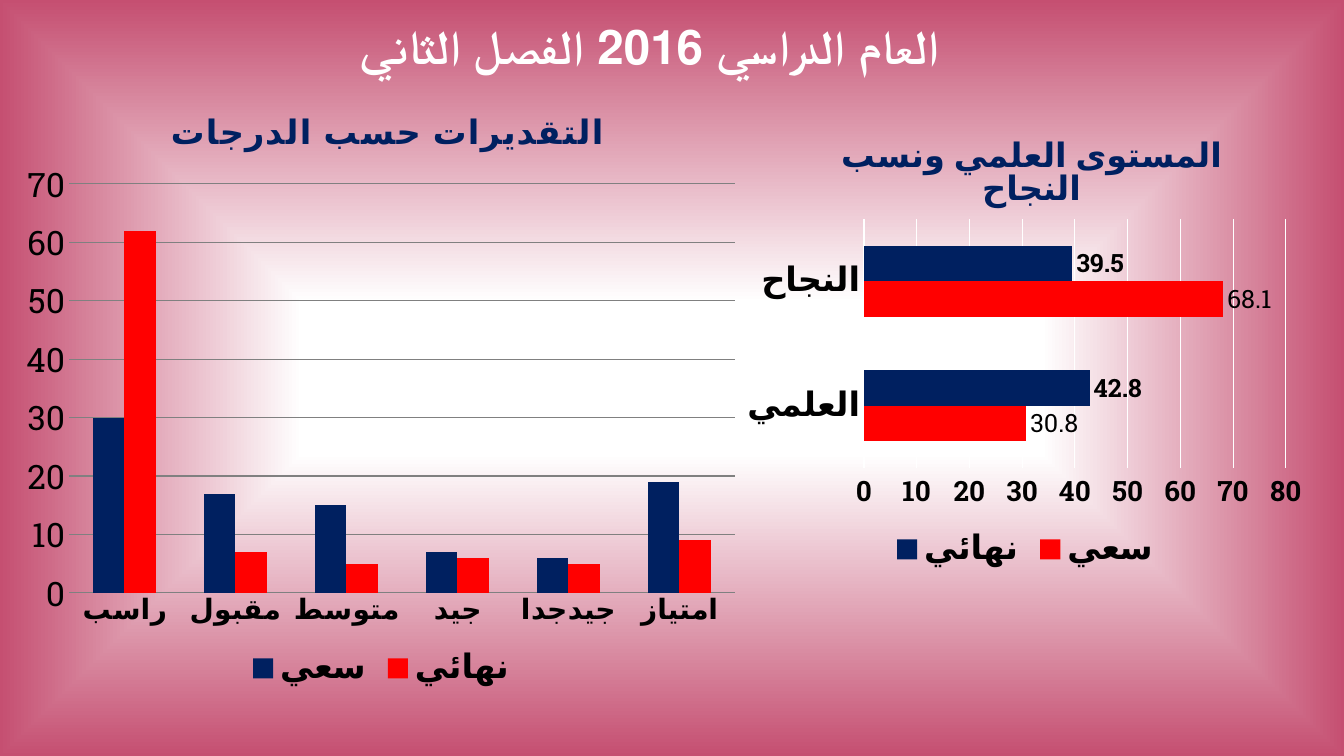
import pptx
import pptx.chart.data
import pptx.dml.color
import pptx.enum.chart
import pptx.enum.text
import pptx.oxml
import pptx.oxml.ns
import pptx.util

PX = 9071  # EMU per pixel at 100.8 pixels to the inch
FONT = "Roboto Slab"
NAVY, RED, BLACK, WHITE, GRAY, ROSE = "002060", "FF0000", "000000", "FFFFFF", "808080", "C54F71"
COURSEWORK, FINAL = "سعي", "نهائي"


def px(length):
    return pptx.util.Emu(length * PX)


def color(hex_string):
    return pptx.dml.color.RGBColor.from_string(hex_string)


def style_font(font, size, hex_string, bold=False):
    font.name = FONT
    font.size = pptx.util.Pt(size)
    font.bold = bold
    font.color.rgb = color(hex_string)


def set_background(slide):
    stops = "".join(
        f'<a:gs pos="{position}000"><a:srgbClr val="{tone}"/></a:gs>'
        for position, tone in ((0, WHITE), (20, WHITE), (100, ROSE)))
    background = pptx.oxml.parse_xml(
        f'<p:bg {pptx.oxml.ns.nsdecls("p", "a")}><p:bgPr><a:gradFill rotWithShape="1">'
        f'<a:gsLst>{stops}</a:gsLst><a:path path="shape">'
        '<a:fillToRect l="50000" t="50000" r="50000" b="50000"/></a:path>'
        '</a:gradFill><a:effectLst/></p:bgPr></p:bg>')
    slide.element.cSld.insert(0, background)


def set_title(slide, box, text):
    title = slide.shapes.title
    title.left, title.top, title.width, title.height = map(px, box)
    frame = title.text_frame
    frame.text = text
    frame.vertical_anchor = pptx.enum.text.MSO_ANCHOR.MIDDLE
    paragraph = frame.paragraphs[0]
    paragraph.alignment = pptx.enum.text.PP_ALIGN.CENTER
    paragraph.line_spacing = 0.9
    paragraph._p.get_or_add_pPr().set("rtl", "1")
    style_font(paragraph.runs[0].font, 34, WHITE, True)


def manual_layout(box, area, inner=False):
    """Layout element placing area (slide pixels) inside the chart box."""
    left, top, width, height = box
    x, y, *size = area
    values = [("x", (x - left) / width), ("y", (y - top) / height)]
    if size:
        values += [("w", size[0] / width), ("h", size[1] / height)]
    target = '<c:layoutTarget val="inner"/>' if inner else ""
    modes = '<c:xMode val="edge"/><c:yMode val="edge"/>'
    numbers = "".join(f'<c:{name} val="{value:.4f}"/>' for name, value in values)
    return pptx.oxml.parse_xml(
        f'<c:layout {pptx.oxml.ns.nsdecls("c")}><c:manualLayout>{target}{modes}{numbers}'
        '</c:manualLayout></c:layout>')


def place(element, layout, index):
    for old in element.findall(pptx.oxml.ns.qn("c:layout")):
        element.remove(old)
    element.insert(index, layout)


def add_grade_chart(slide, box, kind, heading, heading_at, spacing, plot_area,
                    categories, series, category_size, value_size, value_bold,
                    grid, maximum):
    data = pptx.chart.data.CategoryChartData()
    data.categories = categories
    for name, values, _ in series:
        data.add_series(name, values)
    chart = slide.shapes.add_chart(kind, *map(px, box), data).chart
    style_font(chart.font, 10, WHITE)

    # Heading
    frame = chart.chart_title.text_frame
    frame.text = heading
    for paragraph in frame.paragraphs:
        for run in paragraph.runs:
            style_font(run.font, 24, NAVY, True)
            run.font._element.set("spc", str(spacing))
    chart.chart_title.include_in_layout = False
    place(chart.chart_title._element, manual_layout(box, heading_at), 1)
    plot_element = chart._chartSpace.chart.plotArea
    place(plot_element, manual_layout(box, plot_area, True), 0)

    # Bars
    plot = chart.plots[0]
    plot.gap_width, plot.overlap, plot.vary_by_categories = 150, 0, False
    for bars, (_, _, tone) in zip(plot.series, series):
        bars.format.fill.solid()
        bars.format.fill.fore_color.rgb = color(tone)

    # Axes
    for axis, size, bold in ((chart.category_axis, category_size, True),
                             (chart.value_axis, value_size, value_bold)):
        axis.major_tick_mark = pptx.enum.chart.XL_TICK_MARK.NONE
        axis.format.line.fill.background()
        style_font(axis.tick_labels.font, size, BLACK, bold)
    axis = chart.value_axis
    axis.minimum_scale, axis.maximum_scale, axis.major_unit = 0, maximum, 10
    axis.has_major_gridlines = True
    axis.major_gridlines.format.line.color.rgb = color(grid)
    axis.major_gridlines.format.line.width = pptx.util.Pt(0.75)

    # Legend
    chart.has_legend = True
    chart.legend.position = pptx.enum.chart.XL_LEGEND_POSITION.BOTTOM
    chart.legend.include_in_layout = False
    style_font(chart.legend.font, 24, BLACK, True)
    return chart


def add_level_chart(slide, box):
    chart = add_grade_chart(
        slide, box, pptx.enum.chart.XL_CHART_TYPE.BAR_CLUSTERED,
        "المستوى العلمي ونسب النجاح", (835, 130), 0, (864, 219, 422, 249),
        ["العلمي", "النجاح"],
        [(COURSEWORK, (30.8, 68.1), RED), (FINAL, (42.8, 39.5), NAVY)],
        24, 20, True, WHITE, 80)
    line = chart.category_axis.format.line
    line.color.rgb = color(WHITE)
    line.width = pptx.util.Pt(1)
    for bars, bold in zip(chart.plots[0].series, (False, True)):
        labels = bars.data_labels
        labels.show_value = True
        labels.position = pptx.enum.chart.XL_LABEL_POSITION.OUTSIDE_END
        style_font(labels.font, 18, BLACK, bold)


def add_grades_chart(slide, box):
    add_grade_chart(
        slide, box, pptx.enum.chart.XL_CHART_TYPE.COLUMN_CLUSTERED,
        "التقديرات حسب الدرجات", (165, 107), 100, (69, 184, 666, 409),
        ["راسب", "مقبول", "متوسط", "جيد", "جيدجدا", "امتياز"],
        [(COURSEWORK, (30, 17, 15, 7, 6, 19), NAVY), (FINAL, (62, 7, 5, 6, 5, 9), RED)],
        20, 24, False, GRAY, 70)


def main():
    presentation = pptx.Presentation()
    presentation.slide_width, presentation.slide_height = px(1344), px(756)
    slide = presentation.slides.add_slide(presentation.slide_layouts[5])
    set_background(slide)
    set_title(slide, (76, 10, 1146, 79), "العام الدراسي 2016 الفصل الثاني")
    add_level_chart(slide, (736, 108, 578, 465))
    add_grades_chart(slide, (12, 89, 738, 603))
    presentation.save("out.pptx")


if __name__ == "__main__":
    main()
